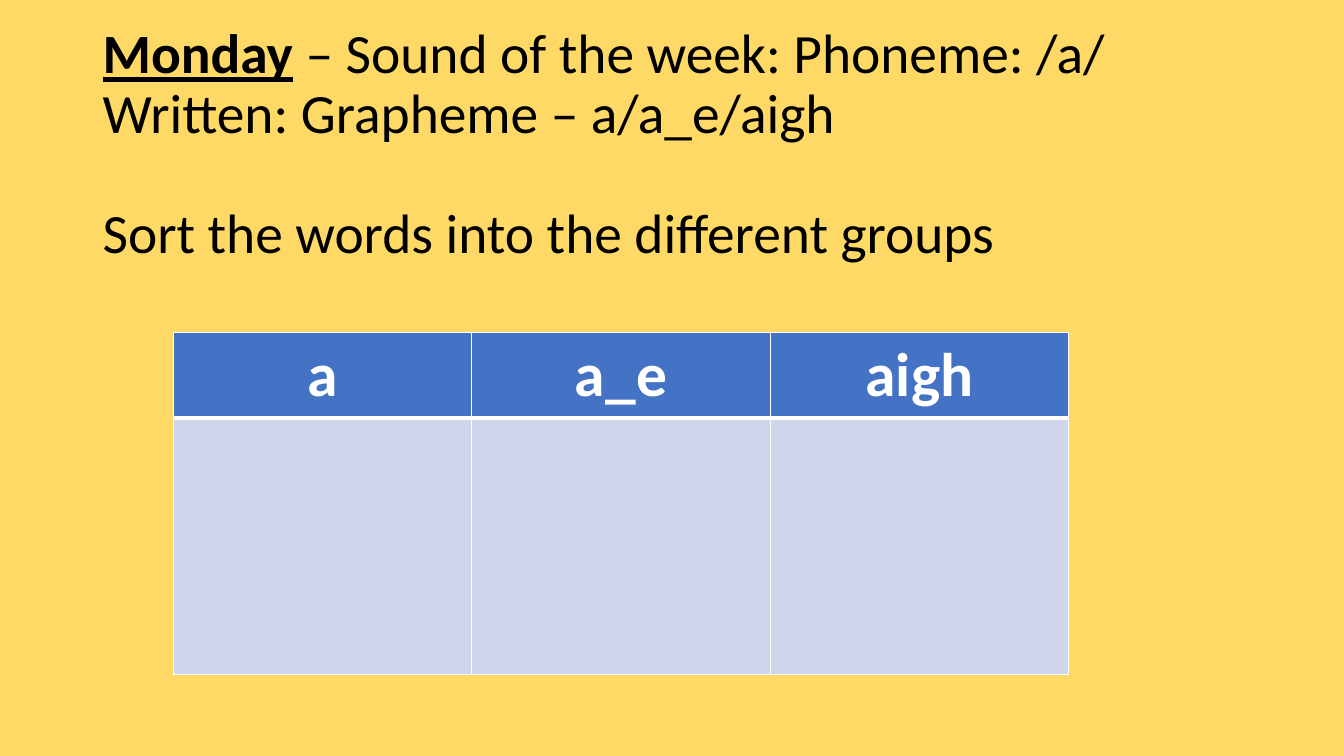
from lxml import etree
from pptx import Presentation
from pptx.dml.color import RGBColor
from pptx.enum.text import MSO_ANCHOR as Anchor, PP_ALIGN as Align
from pptx.oxml.ns import qn
from pptx.util import Inches, Pt

DAY = "Monday"
LINES = [
    " – Sound of the week: Phoneme: /a/",
    "Written: Grapheme – a/a_e/aigh",
    "Sort the words into the different groups",
]
GROUPS = ["a", "a_e", "aigh"]

FONT = "Calibri"
YELLOW = RGBColor(0xFF, 0xD9, 0x66)
BLUE = RGBColor(0x44, 0x72, 0xC4)
PALE = RGBColor(0xCF, 0xD5, 0xEA)
WHITE = RGBColor(0xFF, 0xFF, 0xFF)
BLACK = RGBColor(0, 0, 0)

COL_W = 2.96
ROWS = [(0.85, BLUE), (2.54, PALE)]
THIN, THICK = 1, 3


def style(font, size, color, bold=None):
    font.name, font.size, font.bold = FONT, Pt(size), bold
    font.color.rgb = color


def border(cell, top, bottom):
    """Draw white cell edges; top and bottom widths are in points."""
    props = cell._tc.get_or_add_tcPr()
    for side, width in zip("LRTB", (THIN, THIN, top, bottom)):
        line = etree.SubElement(props, qn(f"a:ln{side}"), w=str(Pt(width)))
        fill = etree.SubElement(line, qn("a:solidFill"))
        etree.SubElement(fill, qn("a:srgbClr"), val=str(WHITE))


def add_title(slide):
    box = slide.shapes.add_textbox(Inches(0.92), Inches(0.72), Inches(11.5), Inches(1.45))
    frame = box.text_frame
    frame.word_wrap = True
    frame.vertical_anchor = Anchor.MIDDLE
    for i, line in enumerate(LINES):
        para = frame.paragraphs[0] if i == 0 else frame.add_paragraph()
        para.line_spacing = 0.9
        style(para.font, 39.6, BLACK)
        if i == 0:
            day = para.add_run()
            day.text = DAY
            day.font.bold = day.font.underline = True
        para.add_run().text = line
    para.space_before = Pt(43)


def add_groups(slide):
    count = len(GROUPS)
    height = sum(h for h, _ in ROWS)
    table = slide.shapes.add_table(
        len(ROWS), count, Inches(1.72), Inches(3.3),
        Inches(COL_W * count), Inches(height)).table
    for col in table.columns:
        col.width = Inches(COL_W)
    for r, (high, color) in enumerate(ROWS):
        table.rows[r].height = Inches(high)
        edges = (THIN, THICK) if r == 0 else (THICK, THIN)
        for cell in table.rows[r].cells:
            border(cell, *edges)
            cell.fill.solid()
            cell.fill.fore_color.rgb = color
    for cell, name in zip(table.rows[0].cells, GROUPS):
        cell.text = name
        para = cell.text_frame.paragraphs[0]
        para.alignment = Align.CENTER
        style(para.font, 44, WHITE, True)


def main():
    deck = Presentation()
    deck.slide_width, deck.slide_height = Inches(13.33), Inches(7.5)
    slide = deck.slides.add_slide(deck.slide_layouts[6])
    slide.background.fill.solid()
    slide.background.fill.fore_color.rgb = YELLOW
    add_title(slide)
    add_groups(slide)
    deck.save("out.pptx")


if __name__ == "__main__":
    main()
